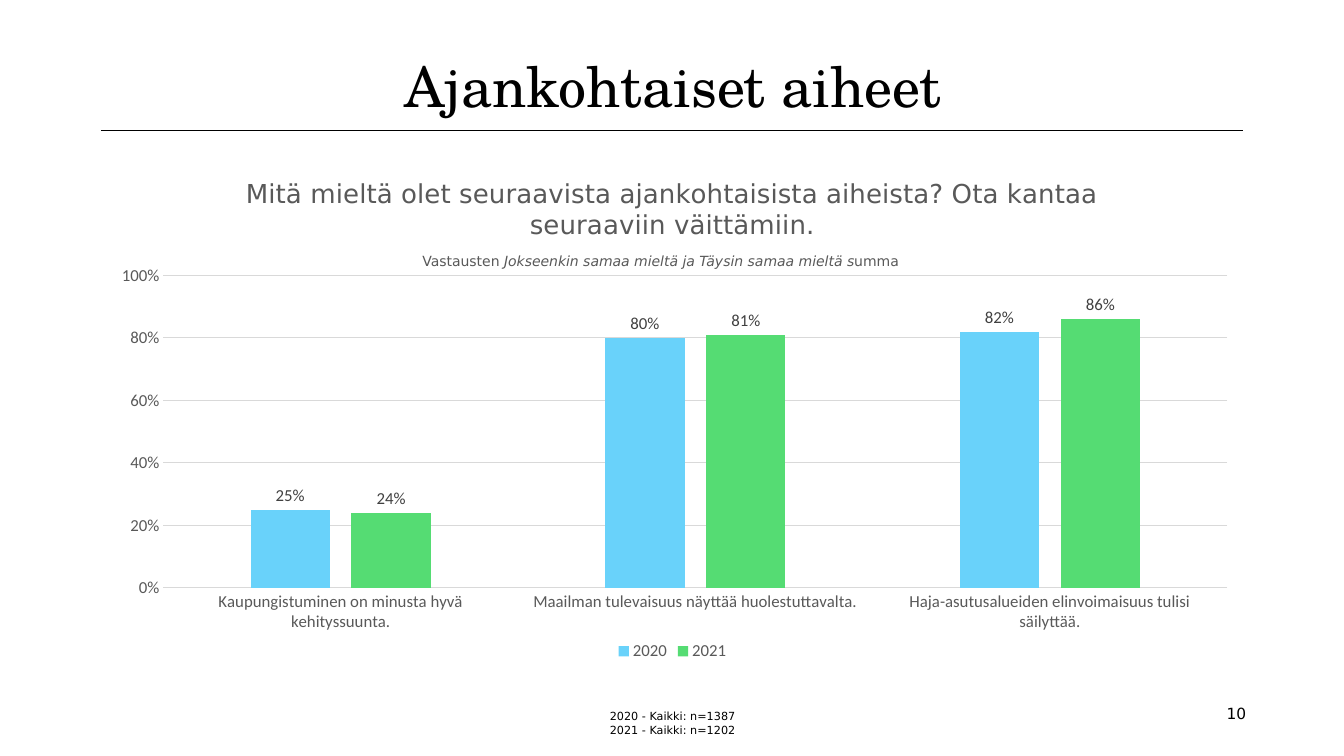
"""Build the slide on current topics with a chart comparing 2020 and 2021."""
from dataclasses import dataclass

from lxml import etree
from pptx import Presentation
from pptx.chart.data import CategoryChartData
from pptx.dml.color import RGBColor
from pptx.enum.chart import XL_CHART_TYPE, XL_LABEL_POSITION, XL_LEGEND_POSITION, XL_TICK_MARK
from pptx.enum.shapes import MSO_CONNECTOR
from pptx.enum.text import MSO_ANCHOR, PP_ALIGN
from pptx.oxml import parse_xml
from pptx.oxml.ns import nsdecls, qn
from pptx.util import Inches, Pt

COLUMNS = XL_CHART_TYPE.COLUMN_CLUSTERED
OUTSIDE_END = XL_LABEL_POSITION.OUTSIDE_END
BOTTOM_LEGEND = XL_LEGEND_POSITION.BOTTOM
NO_TICK = XL_TICK_MARK.NONE
STRAIGHT = MSO_CONNECTOR.STRAIGHT
TOP, MIDDLE, BOTTOM = MSO_ANCHOR.TOP, MSO_ANCHOR.MIDDLE, MSO_ANCHOR.BOTTOM
LEFT, CENTER, RIGHT = PP_ALIGN.LEFT, PP_ALIGN.CENTER, PP_ALIGN.RIGHT

SANS, SERIF, CHART_FONT = "DejaVu Sans", "TeX Gyre Schola", "Calibri"
BLACK, GRAY, LABEL_GRAY, GRID_GRAY = "000000", "595959", "404040", "D9D9D9"


@dataclass(frozen=True)
class Run:
    text: str
    italic: bool = False


@dataclass(frozen=True)
class TextBlock:
    box: tuple[float, float, float, float]
    paragraphs: list[list[Run]]
    size: float
    font: str = SANS
    color: str = BLACK
    align: PP_ALIGN = LEFT
    anchor: MSO_ANCHOR = TOP
    spacing: float = 0
    wrap: bool = True
    inset: tuple[float, float] = (0.1, 0.05)


@dataclass(frozen=True)
class YearSeries:
    year: str
    shares: tuple[float, ...]
    color: str


TEXTS = [
    TextBlock((8.93, 6.92, 3.53, 0.31), [[Run("10")]], 11,
              align=RIGHT, anchor=MIDDLE, spacing=10),
    TextBlock((1.01, 0.29, 11.32, 0.89), [[Run("Ajankohtaiset aiheet")]], 40, SERIF,
              align=CENTER, anchor=BOTTOM, spacing=10, inset=(0, 0)),
    TextBlock((5.95, 6.99, 1.5, 0.37),
              [[Run("2020 - Kaikki: n=1387")], [Run("2021 - Kaikki: n=1202")]], 8, wrap=False),
    TextBlock((4.09, 2.46, 5.15, 0.27),
              [[Run("Vastausten "),
                Run("Jokseenkin samaa mieltä ja Täysin samaa mieltä s", True),
                Run("umma")]], 10, color=GRAY),
]
QUESTION = "Mitä mieltä olet seuraavista ajankohtaisista aiheista? Ota kantaa seuraaviin väittämiin."
CLAIMS = [
    "Kaupungistuminen on minusta hyvä kehityssuunta.",
    "Maailman tulevaisuus näyttää huolestuttavalta.",
    "Haja-asutusalueiden elinvoimaisuus tulisi säilyttää.",
]
YEARS = [
    YearSeries("2020", (0.25, 0.8, 0.82), "69D2FA"),
    YearSeries("2021", (0.24, 0.81, 0.86), "55DC73"),
]
PLOT_AREA = {"x": 0.054, "y": 0.234, "w": 0.932, "h": 0.614}


def rgb(color: str) -> RGBColor:
    return RGBColor.from_string(color)


def style_font(font, size: float, color: str, name: str = CHART_FONT) -> None:
    font.size, font.name = Pt(size), name
    font.color.rgb = rgb(color)


def style_line(line, color: str, width: float) -> None:
    line.color.rgb = rgb(color)
    line.width = Pt(width)


def add_text(slide, block: TextBlock) -> None:
    frame = slide.shapes.add_textbox(*map(Inches, block.box)).text_frame
    frame.word_wrap = block.wrap
    frame.vertical_anchor = block.anchor
    side, edge = map(Inches, block.inset)
    frame.margin_left = frame.margin_right = side
    frame.margin_top = frame.margin_bottom = edge
    for index, runs in enumerate(block.paragraphs):
        paragraph = frame.add_paragraph() if index else frame.paragraphs[0]
        paragraph.alignment = block.align
        paragraph.space_before = paragraph.space_after = Pt(block.spacing)
        for part in runs:
            run = paragraph.add_run()
            run.text = part.text
            run.font.italic = part.italic
            style_font(run.font, block.size, block.color, block.font)


def add_rule(slide) -> None:
    rule = slide.shapes.add_connector(
        STRAIGHT, Inches(1), Inches(1.29), Inches(12.33), Inches(1.29))
    style_line(rule.line, BLACK, 0.5)
    etree.SubElement(rule._element.spPr, qn("a:effectLst"))


def place_plot(chart) -> None:
    plot_area = chart._chartSpace.chart.plotArea
    for layout in plot_area.findall(qn("c:layout")):
        plot_area.remove(layout)
    modes = "".join(f'<c:{side}Mode val="edge"/>' for side in "xy")
    sizes = "".join(f'<c:{key} val="{value}"/>' for key, value in PLOT_AREA.items())
    plot_area.insert(0, parse_xml(
        f'<c:layout {nsdecls("c")}><c:manualLayout><c:layoutTarget val="inner"/>'
        f'{modes}{sizes}</c:manualLayout></c:layout>'))


def add_opinion_chart(slide) -> None:
    data = CategoryChartData(number_format="0%")
    data.categories = CLAIMS
    for series in YEARS:
        data.add_series(series.year, series.shares)
    chart = slide.shapes.add_chart(
        COLUMNS, Inches(1.01), Inches(1.55), Inches(11.32), Inches(5.05), data).chart
    style_font(chart.font, 10, BLACK)

    chart.has_title = True
    question = chart.chart_title.text_frame.paragraphs[0].add_run()
    question.text = QUESTION
    question.font.bold = False
    style_font(question.font, 18.6, GRAY, SANS)
    chart.chart_title.include_in_layout = False

    chart.has_legend = True
    chart.legend.position = BOTTOM_LEGEND
    chart.legend.include_in_layout = False
    style_font(chart.legend.font, 12, GRAY)

    claims, shares = chart.category_axis, chart.value_axis
    for axis in (claims, shares):
        axis.major_tick_mark = axis.minor_tick_mark = NO_TICK
        style_font(axis.tick_labels.font, 12, GRAY)
    style_line(claims.format.line, GRID_GRAY, 0.75)
    shares.format.line.fill.background()
    shares.minimum_scale, shares.maximum_scale, shares.major_unit = 0, 1, 0.2
    shares.tick_labels.number_format = "0%"
    shares.tick_labels.number_format_is_linked = False
    style_line(shares.major_gridlines.format.line, GRID_GRAY, 0.75)

    plot = chart.plots[0]
    plot.gap_width, plot.overlap, plot.vary_by_categories = 219, -27, False
    for columns, series in zip(plot.series, YEARS):
        columns.format.fill.solid()
        columns.format.fill.fore_color.rgb = rgb(series.color)
        labels = columns.data_labels
        labels.show_value = True
        labels.position = OUTSIDE_END
        labels.number_format, labels.number_format_is_linked = "0%", False
        style_font(labels.font, 12, LABEL_GRAY)
    place_plot(chart)


def main() -> None:
    presentation = Presentation()
    presentation.slide_width, presentation.slide_height = Inches(13.33), Inches(7.5)
    slide = presentation.slides.add_slide(presentation.slide_layouts[6])
    add_rule(slide)
    add_opinion_chart(slide)
    for block in TEXTS:
        add_text(slide, block)
    presentation.save("out.pptx")


if __name__ == "__main__":
    main()
